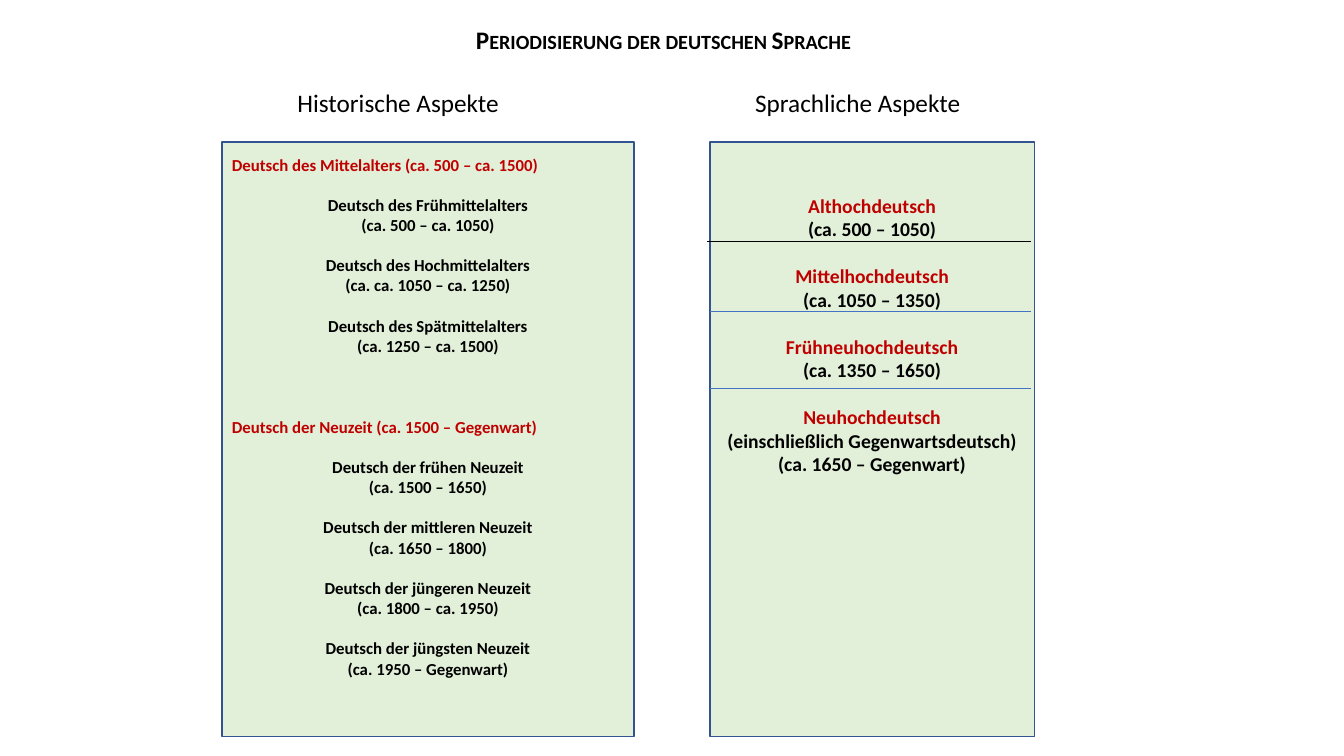
from dataclasses import dataclass

from lxml import etree
from pptx import Presentation
from pptx.dml.color import RGBColor
from pptx.enum import shapes, text
from pptx.oxml.ns import qn
from pptx.util import Inches, Pt

TITLE = "Periodisierung der deutschen Sprache"
HEADS = ["Historische Aspekte", "Sprachliche Aspekte"]
# Each era: its heading, then its periods as (name, dates)
ERAS = [
    ("Deutsch des Mittelalters (ca. 500 – ca. 1500)", [
        ("Deutsch des Frühmittelalters", "(ca. 500 – ca. 1050)"),
        ("Deutsch des Hochmittelalters", "(ca. ca. 1050 – ca. 1250)"),
        ("Deutsch des Spätmittelalters", "(ca. 1250 – ca. 1500)"),
    ]),
    ("Deutsch der Neuzeit (ca. 1500 – Gegenwart)", [
        ("Deutsch der frühen Neuzeit", "(ca. 1500 – 1650)"),
        ("Deutsch der mittleren Neuzeit", "(ca. 1650 – 1800)"),
        ("Deutsch der jüngeren Neuzeit", "(ca. 1800 – ca. 1950)"),
        ("Deutsch der jüngsten Neuzeit", "(ca. 1950 – Gegenwart)"),
    ]),
]
STAGES = [
    ("Althochdeutsch", "(ca. 500 – 1050)"),
    ("Mittelhochdeutsch", "(ca. 1050 – 1350)"),
    ("Frühneuhochdeutsch", "(ca. 1350 – 1650)"),
    ("Neuhochdeutsch", "(einschließlich Gegenwartsdeutsch)",
     "(ca. 1650 – Gegenwart)"),
]


@dataclass
class Theme:
    font: str = "Calibri"
    head: int = 18
    era: int = 12
    stage: int = 14
    ink: str = "000000"
    red: str = "C00000"
    green: str = "E2F0D9"
    edge: str = "325491"
    blue: str = "4472C4"


T = Theme()
LEAD = 1.2  # height of one line, as a share of the type size
# Rules between the stages: left end, height, colour
RULES = [(7.01, 2.39, T.ink), (7.04, 3.09, T.blue), (7.04, 3.85, T.blue)]
RULE_END = 10.23


def color(code):
    return RGBColor.from_string(code)


def write(para, words, size=T.head, ink=T.ink, bold=False, mid=False,
          gap=0, small=False):
    """Fill a paragraph; gap is the space before it, in lines."""
    para.alignment = text.PP_ALIGN.CENTER if mid else text.PP_ALIGN.LEFT
    para.space_before = Pt(gap * size * LEAD)
    para.space_after = Pt(0)
    props = para._p.get_or_add_pPr()
    props.set("marL", "0")
    props.set("indent", "0")
    etree.SubElement(props, qn("a:buNone"))
    run = para.add_run()
    run.text = words
    run.font.name, run.font.size, run.font.bold = T.font, Pt(size), bold
    run.font.color.rgb = color(ink)
    if small:
        run._r.get_or_add_rPr().set("cap", "small")


def place(shape, left, top, width, height, inset=0.05, wrap=False):
    """Move a placeholder and return its text frame, set from the top."""
    shape.left, shape.top = Inches(left), Inches(top)
    shape.width, shape.height = Inches(width), Inches(height)
    frame = shape.text_frame
    frame.auto_size = text.MSO_AUTO_SIZE.NONE
    frame.word_wrap = wrap
    frame.vertical_anchor = text.MSO_ANCHOR.TOP
    frame.margin_left = frame.margin_right = Inches(0.1)
    frame.margin_top, frame.margin_bottom = Inches(inset), Inches(0.05)
    return frame


def panel(shape, left, width, inset, rows):
    """Make a green box holding rows of (words, format)."""
    frame = place(shape, left, 1.41, width, 5.9, inset, wrap=True)
    shape.fill.solid()
    shape.fill.fore_color.rgb = color(T.green)
    shape.line.color.rgb = color(T.edge)
    shape.line.width = Pt(1)
    for i, (words, form) in enumerate(rows):
        para = frame.add_paragraph() if i else frame.paragraphs[0]
        write(para, words, bold=True, **form)


def rule(slide, left, top, ink):
    line = slide.shapes.add_connector(
        shapes.MSO_CONNECTOR.STRAIGHT,
        Inches(left), Inches(top), Inches(RULE_END), Inches(top))
    line.line.color.rgb = color(ink)
    line.line.width = Pt(0.5)
    etree.SubElement(line._element.spPr, qn("a:effectLst"))


def era_rows():
    rows = []
    for i, (era, parts) in enumerate(ERAS):
        rows.append((era, dict(size=T.era, ink=T.red, gap=3 if i else 0)))
        for name, dates in parts:
            rows.append((name, dict(size=T.era, mid=True, gap=1)))
            rows.append((dates, dict(size=T.era, mid=True)))
    return rows


def stage_rows():
    rows = []
    for i, (name, *notes) in enumerate(STAGES):
        rows.append((name, dict(size=T.stage, ink=T.red, mid=True,
                                gap=1 if i else 0)))
        rows += [(note, dict(size=T.stage, mid=True)) for note in notes]
    return rows


def main():
    deck = Presentation()
    deck.slide_width, deck.slide_height = Inches(13.33), Inches(7.5)
    slide = deck.slides.add_slide(
        deck.slide_layouts.get_by_name("Comparison"))
    title, head1, body1, head2, body2 = slide.placeholders

    panel(body1, 2.2, 4.09, 0.12, era_rows())
    panel(body2, 7.04, 3.22, 0.51, stage_rows())
    write(place(title, 4.62, 0.19, 4, 0.71).paragraphs[0], TITLE,
          bold=True, small=True)
    for shape, words, left, width in zip(
            (head1, head2), HEADS, (2.85, 7.39), (2.22, 2.47)):
        write(place(shape, left, 0.82, width, 0.4).paragraphs[0], words)
    for left, top, ink in RULES:
        rule(slide, left, top, ink)
    deck.save("out.pptx")


if __name__ == "__main__":
    main()
